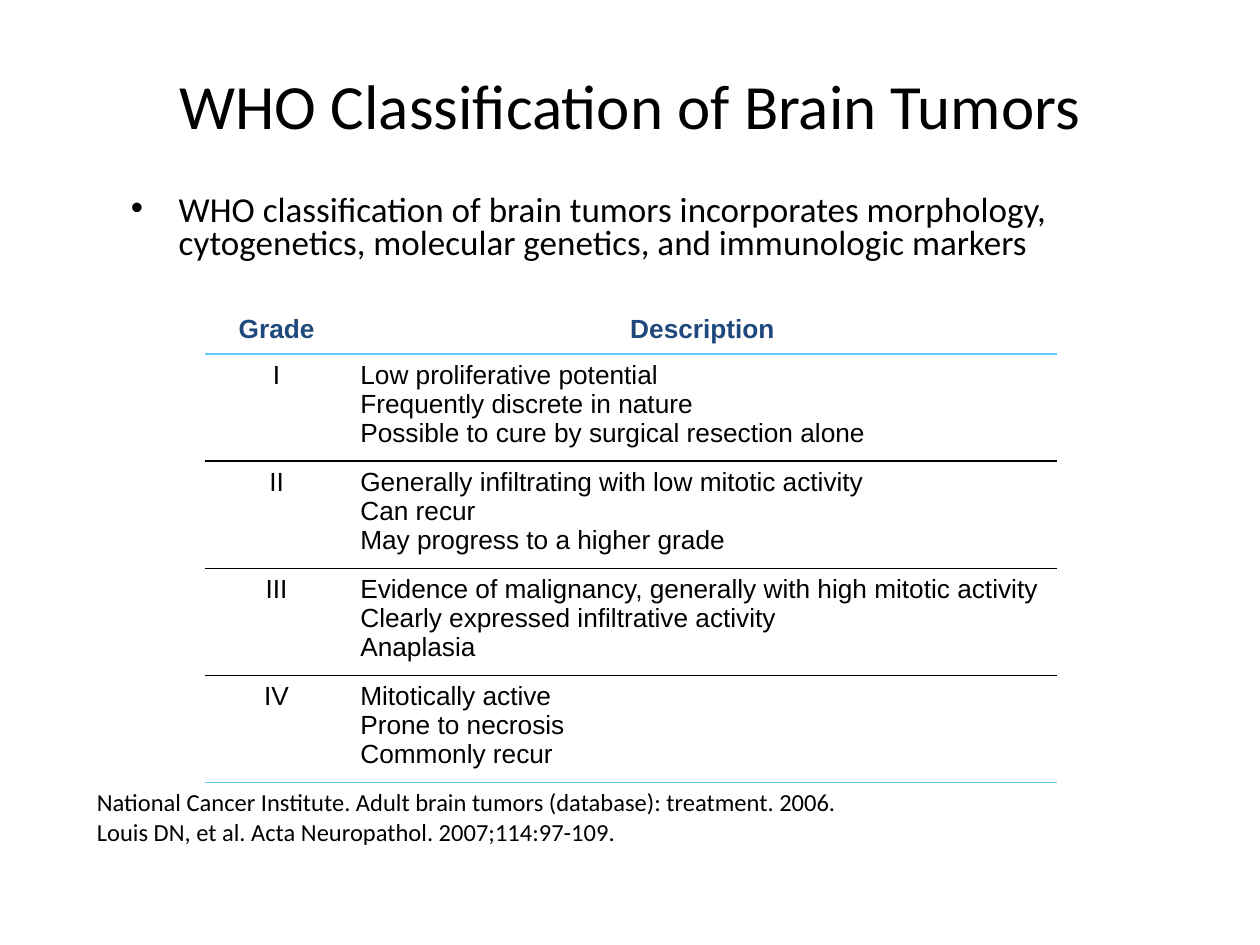
import pptx
import pptx.util
import pptx.dml.color
import pptx.enum.text
import pptx.oxml
import pptx.oxml.ns
from dataclasses import dataclass

Inches = pptx.util.Inches
Pt = pptx.util.Pt
ALIGN = pptx.enum.text.PP_ALIGN
ANCHOR = pptx.enum.text.MSO_ANCHOR

HUES = {"text": "000000", "head": "1F497D", "rule": "000000", "edge": "66CCFF"}


@dataclass
class Grade:
    name: str
    notes: list[str]


@dataclass
class Style:
    font: str
    size: int
    hue: str = "text"
    bold: bool = False
    align: ALIGN = ALIGN.LEFT


GRADES = [
    Grade("I", ["Low proliferative potential",
                "Frequently discrete in nature",
                "Possible to cure by surgical resection alone"]),
    Grade("II", ["Generally infiltrating with low mitotic activity",
                 "Can recur",
                 "May progress to a higher grade"]),
    Grade("III", ["Evidence of malignancy, generally with high mitotic activity",
                  "Clearly expressed infiltrative activity",
                  "Anaplasia"]),
    Grade("IV", ["Mitotically active",
                 "Prone to necrosis",
                 "Commonly recur"]),
]

TITLE = Style("Calibri", 36, align=ALIGN.CENTER)
POINT = Style("Calibri", 20)
SOURCE = Style("Calibri", 14)
HEAD = Style("Arial", 15, "head", True, ALIGN.CENTER)
LABEL = Style("Arial", 15, align=ALIGN.CENTER)
NOTE = Style("Arial", 15)


def write(frame, lines: list[str], style: Style) -> None:
    frame.word_wrap = True
    for i, line in enumerate(lines):
        para = frame.paragraphs[0] if i == 0 else frame.add_paragraph()
        para.text = line
        para.alignment = style.align
        para.font.name = style.font
        para.font.size = Pt(style.size)
        para.font.bold = style.bold
        para.font.color.rgb = pptx.dml.color.RGBColor.from_string(HUES[style.hue])
        para._p.append(pptx.oxml.parse_xml(
            f'<a:endParaRPr {pptx.oxml.ns.nsdecls("a")} sz="{style.size * 100}"/>'))


def add_text(slide, box: tuple, lines: list[str], style: Style):
    frame = slide.shapes.add_textbox(*map(Inches, box)).text_frame
    write(frame, lines, style)
    return frame


def add_bullet(para) -> None:
    para.line_spacing = 0.8
    para.space_before = Pt(4)
    props = para._p.get_or_add_pPr()
    props.set("marL", str(Inches(0.38)))
    props.set("indent", str(Inches(-0.38)))
    space = pptx.oxml.ns.nsdecls("a")
    mark = pptx.oxml.parse_xml(f'<a:buChar {space} char="•"/>')
    face = pptx.oxml.parse_xml(f'<a:buFont {space} typeface="Arial"/>')
    props.find(pptx.oxml.ns.qn("a:defRPr")).addprevious(face)
    face.addnext(mark)


def add_rule(cell, side: str, hue: str | None) -> None:
    fill = f'<a:solidFill><a:srgbClr val="{HUES[hue]}"/></a:solidFill>' if hue else "<a:noFill/>"
    cell._tc.get_or_add_tcPr().append(pptx.oxml.parse_xml(
        f'<a:ln{side} {pptx.oxml.ns.nsdecls("a")} w="{Pt(1)}">{fill}</a:ln{side}>'))


def fill_cell(cell, lines: list[str], style: Style, top: str | None, base: str) -> None:
    write(cell.text_frame, lines, style)
    for side, hue in (("L", None), ("R", None), ("T", top), ("B", base)):
        add_rule(cell, side, hue)
    cell.fill.background()


def add_grades(slide) -> None:
    wide, tall = [1.13, 5.63], [0.36] + [0.79] * len(GRADES)
    box = (1.63, 2.45, sum(wide), sum(tall))
    table = slide.shapes.add_table(len(tall), len(wide), *map(Inches, box)).table
    table.first_row = table.horz_banding = False
    for col, size in zip(table.columns, wide):
        col.width = Inches(size)
    for row, size in zip(table.rows, tall):
        row.height = Inches(size)

    for j, head in enumerate(["Grade", "Description"]):
        fill_cell(table.cell(0, j), [head], HEAD, None, "edge")
    for i, grade in enumerate(GRADES, 1):
        top = "edge" if i == 1 else "rule"
        base = "edge" if i == len(GRADES) else "rule"
        fill_cell(table.cell(i, 0), [grade.name], LABEL, top, base)
        fill_cell(table.cell(i, 1), grade.notes, NOTE, top, base)


def main() -> None:
    deck = pptx.Presentation()
    deck.slide_width, deck.slide_height = Inches(10), Inches(7.5)
    slide = deck.slides.add_slide(deck.slide_layouts[5])

    title = slide.shapes.title
    title.left, title.top = Inches(0.5), Inches(0.33)
    title.width, title.height = Inches(9), Inches(1)
    title.text_frame.vertical_anchor = ANCHOR.MIDDLE
    write(title.text_frame, ["WHO Classification of Brain Tumors"], TITLE)

    point = add_text(slide, (0.94, 1.5, 8.18, 0.95), [
        "WHO classification of brain tumors incorporates morphology, "
        "cytogenetics, molecular genetics, and immunologic markers"], POINT)
    add_bullet(point.paragraphs[0])

    add_grades(slide)
    add_text(slide, (0.67, 6.2, 6.08, 0.81), [
        "National Cancer Institute. Adult brain tumors (database): treatment. 2006.",
        "Louis DN, et al. Acta Neuropathol. 2007;114:97-109."], SOURCE)

    deck.save("out.pptx")


if __name__ == "__main__":
    main()
